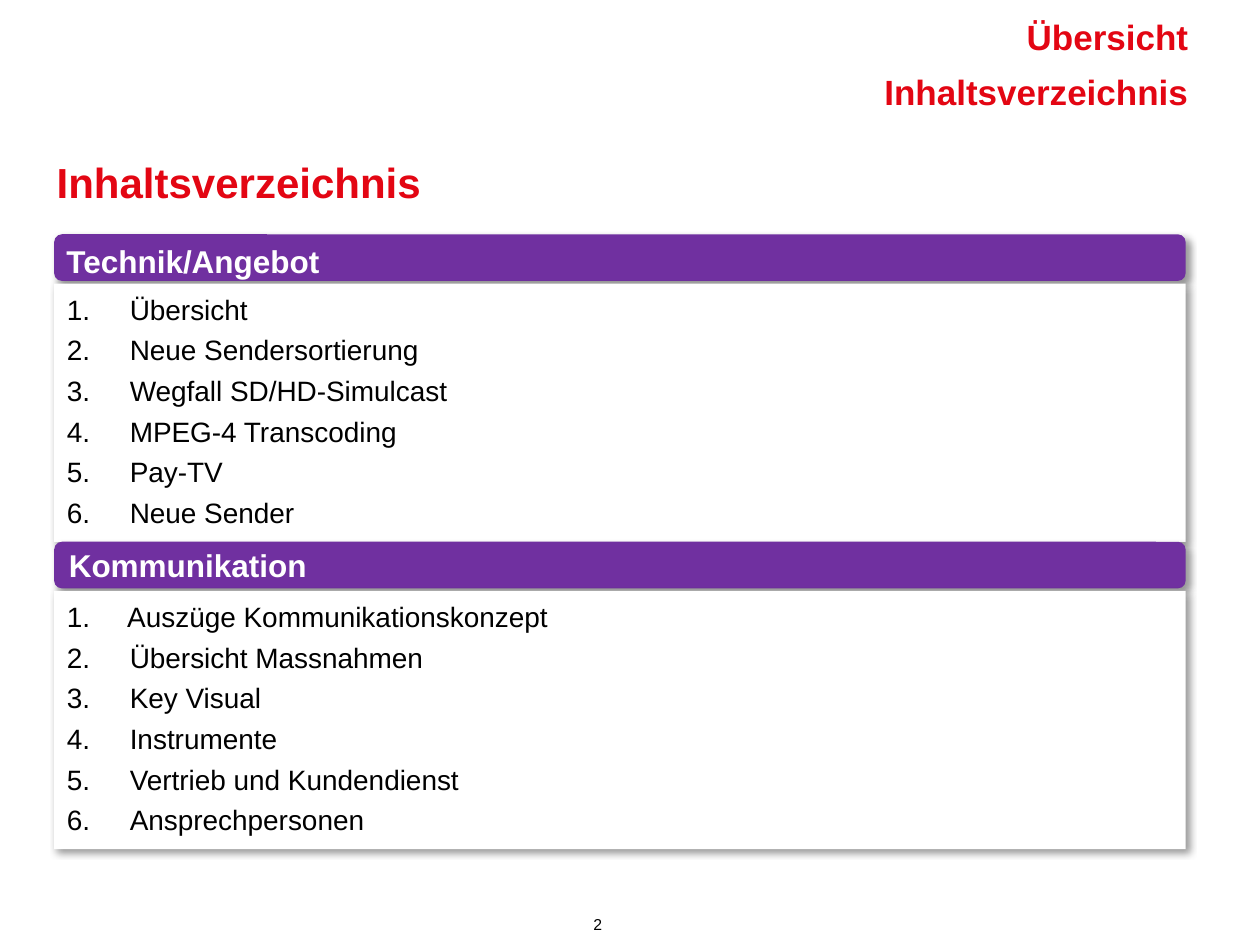
from dataclasses import dataclass
from typing import NamedTuple

from lxml.etree import SubElement
from pptx import Presentation
from pptx.dml.color import RGBColor as RGB
from pptx.enum.shapes import MSO_SHAPE as Kind
from pptx.enum.text import MSO_ANCHOR as Anchor, MSO_AUTO_SIZE as Fit, PP_ALIGN as Align
from pptx.oxml.ns import qn
from pptx.util import Inches, Pt


@dataclass(frozen=True)
class Theme:
    font: str = "Arial"
    red: str = "E30613"
    purple: str = "7030A0"
    white: str = "FFFFFF"
    black: str = "000000"
    title: int = 24
    head: int = 20
    band: int = 18
    list: int = 16
    page: int = 9


class Box(NamedTuple):
    """Place on a grid of 100 columns and 75 rows."""
    col: float
    row: float
    cols: float
    rows: float


class Part(NamedTuple):
    name: str
    items: list[str]
    row: float
    left: float    # inset of the band text
    top: float
    first: float   # indent of the first list item


THEME = Theme()
WIDTH, HEIGHT = Inches(10), Inches(7.5)
COL, ROW = WIDTH / 100, HEIGHT / 75
LEFT, SPAN, BAND, STEP, LIST = 4.3, 89.8, 3.7, 3.9, 20.5
INDENT = 0.5

HEADS = ["Übersicht", "Inhaltsverzeichnis"]
PARTS = [
    Part("Technik/Angebot",
         ["Übersicht", "Neue Sendersortierung", "Wegfall SD/HD-Simulcast",
          "MPEG-4 Transcoding", "Pay-TV", "Neue Sender"],
         row=18.6, left=0.08, top=0.05, first=INDENT),
    Part("Kommunikation",
         ["Auszüge Kommunikationskonzept", "Übersicht Massnahmen", "Key Visual",
          "Instrumente", "Vertrieb und Kundendienst", "Ansprechpersonen"],
         row=43, left=0.1, top=0, first=0.48),
]


def area(box: Box) -> tuple[int, int, int, int]:
    return (round(box.col * COL), round(box.row * ROW),
            round(box.cols * COL), round(box.rows * ROW))


def place(shape, box: Box) -> None:
    shape.left, shape.top, shape.width, shape.height = area(box)


def number(para, indent: float) -> None:
    props = para._p.get_or_add_pPr()
    props.set("marL", str(Inches(indent)))
    props.set("indent", str(-Inches(indent)))
    SubElement(props, qn("a:buAutoNum"), type="arabicPeriod")


def write(shape, lines: list[str], *, size: int, color: str, bold: bool = False,
          align=Align.LEFT, anchor=Anchor.TOP, left: float = 0.1, top: float = 0.07,
          gap: float = 0, indents: list[float] | None = None) -> None:
    frame = shape.text_frame
    frame.word_wrap, frame.auto_size = True, Fit.NONE
    frame.vertical_anchor = anchor
    frame.margin_left, frame.margin_right = Inches(left), Inches(0.1)
    frame.margin_top, frame.margin_bottom = Inches(top), 0
    for i, line in enumerate(lines):
        para = frame.add_paragraph() if i else frame.paragraphs[0]
        para.alignment = align
        para.space_before = Pt(gap if i else 0)
        if indents:
            number(para, indents[i])
        run = para.add_run()
        run.text = line
        font = run.font
        font.name, font.size, font.bold = THEME.font, Pt(size), bold
        font.color.rgb = RGB.from_string(color)


def paint(shape, color: str) -> None:
    """Plain fill, no outline, soft shadow to the lower right."""
    shape.fill.solid()
    shape.fill.fore_color.rgb = RGB.from_string(color)
    shape.line.fill.background()
    effects = SubElement(shape.element.spPr, qn("a:effectLst"))
    shadow = SubElement(effects, qn("a:outerShdw"), blurRad=str(Pt(4)),
                        dist=str(Pt(3)), dir=str(45 * 60000),
                        algn="tl", rotWithShape="0")
    shade = SubElement(shadow, qn("a:srgbClr"), val=THEME.black)
    SubElement(shade, qn("a:alpha"), val="40000")


def draw(slide, part: Part, body) -> None:
    # Coloured band with the section name
    band = slide.shapes.add_shape(Kind.ROUNDED_RECTANGLE,
                                  *area(Box(LEFT, part.row, SPAN, BAND)))
    paint(band, THEME.purple)
    write(band, [part.name], size=THEME.band, color=THEME.white, bold=True,
          anchor=Anchor.MIDDLE, left=part.left, top=part.top)
    # Numbered list, in front of the band's shadow
    place(body, Box(LEFT, part.row + STEP, SPAN, LIST))
    paint(body, THEME.white)
    body.element.getparent().append(body.element)
    write(body, part.items, size=THEME.list, color=THEME.black, gap=4,
          indents=[part.first] + [INDENT] * (len(part.items) - 1))


def label(slide, text: str, box: Box, **style) -> None:
    write(slide.shapes.add_textbox(*area(box)), [text], **style)


def main() -> None:
    deck = Presentation()
    deck.slide_width, deck.slide_height = WIDTH, HEIGHT
    slide = deck.slides.add_slide(deck.slide_layouts[3])
    title, *bodies = list(slide.placeholders)

    # Headings at the top right
    for i, head in enumerate(HEADS):
        label(slide, head, Box(42.9, 0.5 + 4.4 * i, 52.4, 4.4), size=THEME.head,
              color=THEME.red, bold=True, align=Align.RIGHT)

    # Title
    place(title, Box(3.5, 11.5, 90.6, 5.5))
    write(title, ["Inhaltsverzeichnis"], size=THEME.title, color=THEME.red,
          bold=True, top=0.09)

    # Sections
    for part, body in zip(PARTS, bodies):
        draw(slide, part, body)

    # Page number
    label(slide, "2", Box(35.8, 72.1, 23.3, 2.9), size=THEME.page,
          color=THEME.black, align=Align.CENTER, top=0.05)

    deck.save("out.pptx")


if __name__ == "__main__":
    main()
